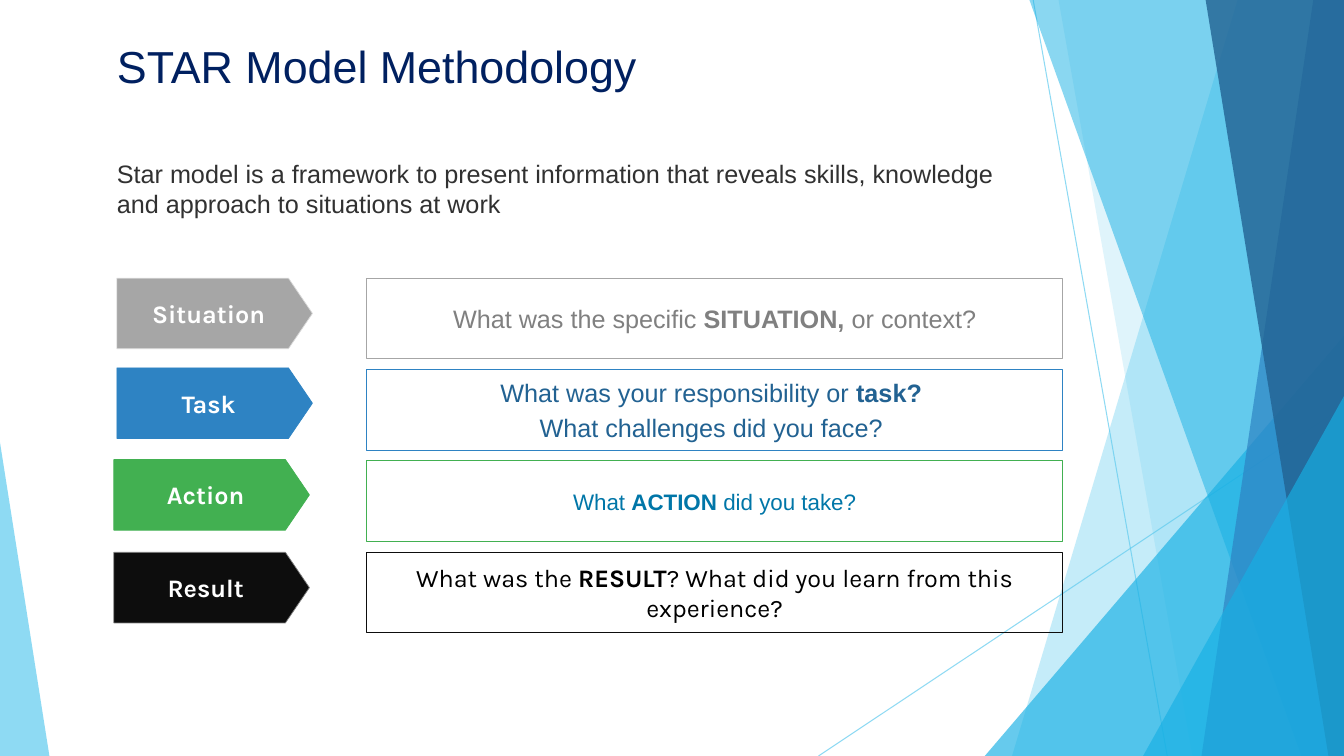
"""Build the STAR Model Methodology slide."""
import pptx
import pptx.dml.color
import pptx.enum.shapes
import pptx.enum.text
import pptx.oxml
import pptx.oxml.ns
import pptx.util

Pt = pptx.util.Pt
SHAPE = pptx.enum.shapes.MSO_SHAPE
ANCHOR = pptx.enum.text.MSO_ANCHOR
ALIGN = pptx.enum.text.PP_ALIGN

COLORS = {
    "sky": "5FCBEF", "cyan": "17B0E4", "blue": "2E83C3", "navy": "226292",
    "title": "002060", "body": "313131", "gray": "A6A6A6", "silver": "D9D9D9",
    "mid": "808080", "green": "42B051", "teal": "0076A8", "ink": "0D0D0D",
    "black": "000000", "white": "FFFFFF",
}
WIDTH, HEIGHT = 960, 540
BOX_TOP, BOX_STEP = 198.72, 65.28

RAYS = [(738, 0, 833.76, HEIGHT), (WIDTH, 290.16, 584.64, HEIGHT)]

# kind, geometry, color, opacity percent
FACETS = [
    ("band", (884.16, 722.88), "sky", 36),
    ("band", (756, 851.76), "sky", 20),
    ("corner", (703.44, 239.76, 256.56, 1), "cyan", 66),
    ("band", (735.12, 929.52), "cyan", 50),
    ("band", (938.16, 858.24), "blue", 70),
    ("band", (861.12, 948.96), "navy", 80),
    ("corner", (816.48, 282.96, 143.52, 1), "cyan", 66),
    ("corner", (0, 316.08, 35.28, 0), "sky", 70),
]

# label, arrow left, arrow top, fill, arrow line, text color, size, font, space after, paragraphs
STEPS = [
    ("Situation", 83.52, 198.72, "gray", "silver", "mid", 18, "Arial", 3,
     [[("What was the specific ", False), ("SITUATION, ", True), ("or context?", False)]]),
    ("Task", 83.52, 262.8, "blue", "blue", "navy", 18, "Arial", 3,
     [[("What was your responsibility or ", False), ("task? ", True)],
      [("What challenges did you face? ", False)]]),
    ("Action", 81.36, 328.32, "green", "green", "teal", 16, "Arial", 0,
     [[("What ", False), ("ACTION", True), (" did you take?", False)]]),
    ("Result", 81.36, 394.56, "ink", "mid", "black", 18, "Karla", 0,
     [[("What was the ", False), ("RESULT", True),
       ("? What did you learn from this experience?", False)]]),
]


def rgb(name):
    """Return the named color."""
    return pptx.dml.color.RGBColor.from_string(COLORS[name])


def set_opacity(element, percent):
    """Set the opacity of the color inside a fill or line."""
    color = next(element.iter(pptx.oxml.ns.qn("a:srgbClr")))
    alpha = pptx.oxml.parse_xml(
        f'<a:alpha {pptx.oxml.ns.nsdecls("a")} val="{percent * 1000}"/>')
    color.append(alpha)


def add_ray(slide, x1, y1, x2, y2):
    """Add a thin translucent background line."""
    ray = slide.shapes.add_connector(
        pptx.enum.shapes.MSO_CONNECTOR.STRAIGHT, Pt(x1), Pt(y1), Pt(x2), Pt(y2))
    ray.line.color.rgb = rgb("sky")
    ray.line.width = Pt(0.75)
    properties = ray.element.spPr
    set_opacity(properties, 70)
    properties.append(pptx.oxml.parse_xml(f'<a:effectLst {pptx.oxml.ns.nsdecls("a")}/>'))


def add_facet(slide, kind, geometry, color, opacity):
    """Add a translucent background band or corner triangle."""
    if kind == "band":
        top_x, bottom_x = geometry
        outline = slide.shapes.build_freeform(Pt(top_x), Pt(-0.6))
        corners = [(WIDTH, -0.6), (WIDTH, HEIGHT), (bottom_x, HEIGHT)]
        outline.add_line_segments([(Pt(x), Pt(y)) for x, y in corners], close=True)
        facet = outline.convert_to_shape()
    else:
        left, top, width, apex = geometry
        facet = slide.shapes.add_shape(
            SHAPE.ISOSCELES_TRIANGLE, Pt(left), Pt(top), Pt(width), Pt(HEIGHT - top))
        facet.adjustments[0] = apex
    facet.shadow.inherit = False
    facet.fill.solid()
    facet.fill.fore_color.rgb = rgb(color)
    facet.line.fill.background()
    set_opacity(facet.element.spPr, opacity)


def write(shape, paragraphs, color, size, font="Arial", align=ALIGN.CENTER,
          anchor=ANCHOR.MIDDLE, inset=0, before=0, after=0):
    """Fill a shape with paragraphs of (text, bold) runs."""
    frame = shape.text_frame
    frame.word_wrap = True
    frame.vertical_anchor = anchor
    frame.margin_left = frame.margin_right = Pt(inset)
    frame.margin_top = frame.margin_bottom = Pt(inset)
    for index, runs in enumerate(paragraphs):
        para = frame.paragraphs[0] if index == 0 else frame.add_paragraph()
        para.alignment = align
        para.space_before, para.space_after = Pt(before), Pt(after)
        for text, bold in runs:
            span = para.add_run()
            span.text = text
            span.font.name, span.font.size, span.font.bold = font, Pt(size), bold
            span.font.color.rgb = rgb(color)


def add_text(slide, top, height, text, color, size, before=0):
    """Add a left-aligned text box in the heading column."""
    box = slide.shapes.add_textbox(Pt(83.52), Pt(top), Pt(660.96), Pt(height))
    write(box, [[(text, False)]], color, size, align=ALIGN.LEFT,
          anchor=ANCHOR.TOP, before=before)


def add_panel(slide, kind, left, top, width, height, fill, line, weight):
    """Add an outlined shape with an optional fill."""
    panel = slide.shapes.add_shape(kind, Pt(left), Pt(top), Pt(width), Pt(height))
    panel.shadow.inherit = False
    if fill:
        panel.fill.solid()
        panel.fill.fore_color.rgb = rgb(fill)
    else:
        panel.fill.background()
    panel.line.color.rgb = rgb(line)
    panel.line.width = Pt(weight)
    return panel


def add_step(slide, index, label, left, top, fill, line, color, size, font, after, question):
    """Add one STAR step: its question box and its arrow label."""
    box = add_panel(slide, SHAPE.RECTANGLE, 262.08, BOX_TOP + index * BOX_STEP,
                    496.8, 57.6, None, fill, 0.75)
    write(box, question, color, size, font, after=after)
    arrow = add_panel(slide, SHAPE.PENTAGON, left, top, 139.68, 50.4, fill, line, 0.5)
    arrow.adjustments[0] = 0.34
    write(arrow, [[(label, True)]], "white", 18, "Karla", inset=5.76)


def main():
    """Build and save the deck."""
    deck = pptx.Presentation()
    deck.slide_width, deck.slide_height = Pt(WIDTH), Pt(HEIGHT)
    page = deck.slides.add_slide(deck.slide_layouts[6])
    for ray in RAYS:
        add_ray(page, *ray)
    for facet in FACETS:
        add_facet(page, *facet)
    add_text(page, 27.36, 54.72, "STAR Model Methodology", "title", 32)
    add_text(page, 113.04, 43.92,
             "Star model is a framework to present information that reveals skills, "
             "knowledge and approach to situations at work", "body", 18, before=6)
    for index, step in enumerate(STEPS):
        add_step(page, index, *step)
    deck.save("out.pptx")


if __name__ == "__main__":
    main()
